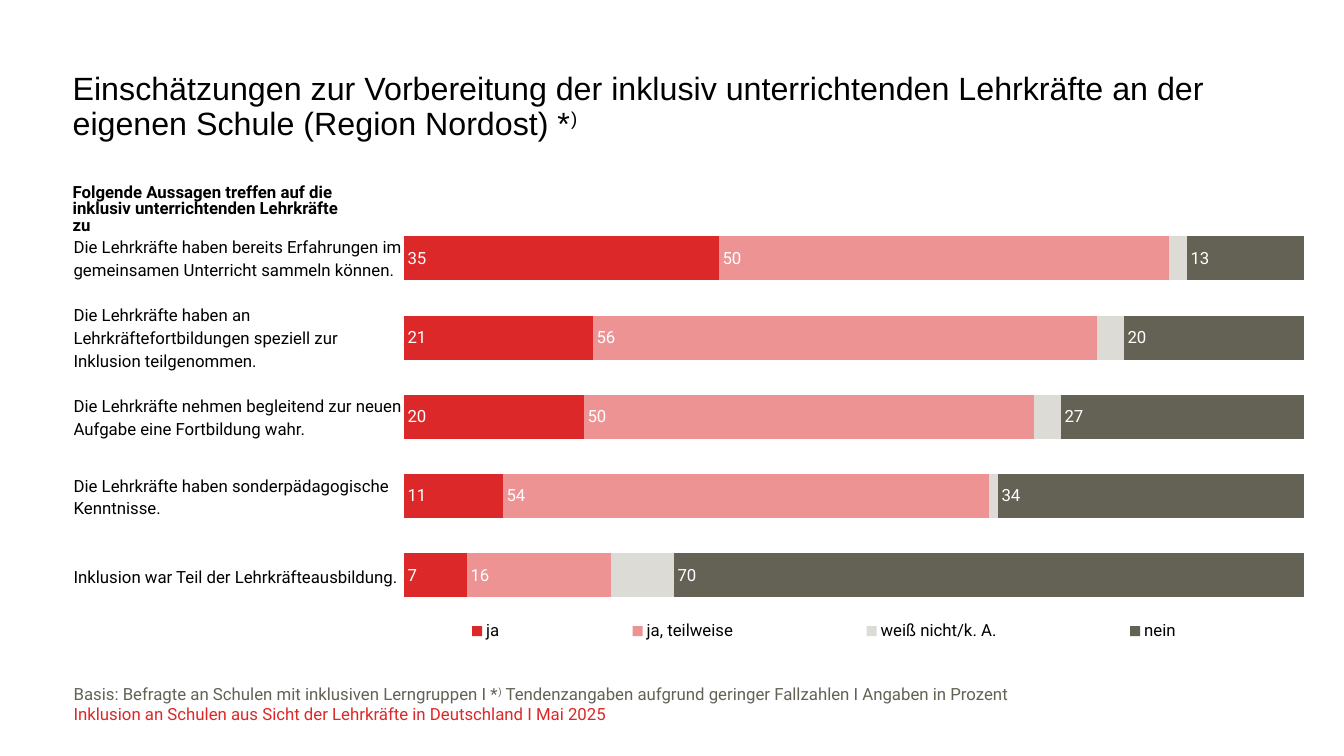
import pptx
import pptx.chart.data
import pptx.dml.color
import pptx.enum.chart
import pptx.enum.text
import pptx.util
from lxml import etree

Inches = pptx.util.Inches
Pt = pptx.util.Pt
ANCHOR = pptx.enum.text.MSO_ANCHOR

COLORS = {
    "text": "000000",
    "label": "FFFFFF",
    "ja": "DC2828",
    "teilweise": "ED9393",
    "unbekannt": "DCDBD5",
    "nein": "636255",
}

STATEMENTS = [
    "Die Lehrkräfte haben bereits Erfahrungen im gemeinsamen Unterricht sammeln können.",
    "Die Lehrkräfte haben an Lehrkräftefortbildungen speziell zur Inklusion teilgenommen.",
    "Die Lehrkräfte nehmen begleitend zur neuen Aufgabe eine Fortbildung wahr.",
    "Die Lehrkräfte haben sonderpädagogische Kenntnisse.",
    "Inklusion war Teil der Lehrkräfteausbildung.",
]

# Name, colour, values, labels shown
ANSWERS = [
    ("ja", "ja", (35, 21, 20, 11, 7), True),
    ("ja, teilweise", "teilweise", (50, 56, 50, 54, 16), True),
    ("weiß nicht/k. A.", "unbekannt", (2, 3, 3, 1, 7), False),
    ("nein", "nein", (13, 20, 27, 34, 70), True),
]


def rgb(name):
    return pptx.dml.color.RGBColor.from_string(COLORS[name])


class SurveySlide:
    """Holds the style and the current slide."""

    font_name = "Roboto"
    font_size = 12

    def __init__(self, presentation):
        self.slide = presentation.slides.add_slide(presentation.slide_layouts[5])

    def style_font(self, font, color="text", size=None, name=None, bold=False):
        font.name = name or self.font_name
        font.size = Pt(size or self.font_size)
        font.bold = bold
        font.color.rgb = rgb(color)

    def fill_paragraph(self, paragraph, pieces, **style):
        """Write the pieces as runs; every second piece is superscript."""
        for index, piece in enumerate(pieces):
            run = paragraph.add_run()
            run.text = piece
            self.style_font(run.font, **style)
            if index % 2:
                run._r.get_or_add_rPr().set("baseline", "30000")

    def clear_margins(self, box):
        box.margin_left = box.margin_right = box.margin_top = box.margin_bottom = 0

    def add_title(self, left, top, width, height, pieces):
        title = self.slide.shapes.title
        title.left, title.top = Inches(left), Inches(top)
        title.width, title.height = Inches(width), Inches(height)
        text_frame = title.text_frame
        self.clear_margins(text_frame)
        text_frame.word_wrap = True
        text_frame.auto_size = pptx.enum.text.MSO_AUTO_SIZE.NONE
        text_frame.vertical_anchor = ANCHOR.TOP
        paragraph = text_frame.paragraphs[0]
        paragraph.alignment = pptx.enum.text.PP_ALIGN.LEFT
        paragraph.line_spacing = 0.9
        self.fill_paragraph(paragraph, pieces, size=23, name="Arial")

    def add_footer(self, left, top, width, height, basis, source):
        box = self.slide.shapes.add_textbox(
            Inches(left), Inches(top), Inches(width), Inches(height))
        text_frame = box.text_frame
        text_frame.word_wrap = True
        self.clear_margins(text_frame)
        text_frame.margin_top = Inches(0.17)
        paragraph = text_frame.paragraphs[0]
        paragraph.line_spacing = 0.85
        self.fill_paragraph(paragraph, basis, color="nein")
        self.fill_paragraph(text_frame.add_paragraph(), [source], color="ja")

    def add_text_table(self, left, top, width, row_height, texts, anchor,
                       line_spacing, gap=0, bold=False):
        table = self.slide.shapes.add_table(
            len(texts), 1, Inches(left), Inches(top), Inches(width),
            Inches(row_height * len(texts))).table
        table.first_row = table.horz_banding = False
        for row, text in zip(table.rows, texts):
            row.height = Inches(row_height)
            cell = row.cells[0]
            cell.fill.background()
            cell.vertical_anchor = anchor
            self.clear_margins(cell)
            paragraph = cell.text_frame.paragraphs[0]
            paragraph.line_spacing = line_spacing
            if gap:
                paragraph.space_after = Pt(gap)
            self.fill_paragraph(paragraph, [text], bold=bold)

    def set_layout(self, element, position, inner=False):
        """Give a plot area or legend a fixed place in chart fractions."""
        for old in element.findall(pptx.oxml.ns.qn("c:layout")):
            element.remove(old)
        layout = etree.Element(pptx.oxml.ns.qn("c:layout"))
        manual = etree.SubElement(layout, pptx.oxml.ns.qn("c:manualLayout"))
        settings = [("layoutTarget", "inner")] if inner else []
        settings += [("xMode", "edge"), ("yMode", "edge")]
        settings += zip("xywh", position)
        for tag, value in settings:
            etree.SubElement(manual, pptx.oxml.ns.qn("c:" + tag)).set("val", str(value))
        element.insert(0 if inner else 1, layout)

    def add_stacked_bars(self, left, top, width, height, answers):
        data = pptx.chart.data.CategoryChartData()
        data.categories = [str(number + 1) for number in range(len(answers[0][2]))]
        for name, _, values, _ in answers:
            data.add_series(name, values)
        chart = self.slide.shapes.add_chart(
            pptx.enum.chart.XL_CHART_TYPE.BAR_STACKED, Inches(left), Inches(top),
            Inches(width), Inches(height), data).chart
        self.style_font(chart.font)
        chart.has_title = False

        # Axes
        chart.category_axis.reverse_order = True
        chart.category_axis.visible = False
        value_axis = chart.value_axis
        value_axis.minimum_scale, value_axis.maximum_scale = 0, 100
        value_axis.major_unit = 20
        value_axis.has_major_gridlines = False
        value_axis.visible = False

        # Bars and value labels
        plot = chart.plots[0]
        plot.gap_width, plot.overlap = 80, 100
        plot.vary_by_categories = False
        for series, (_, color, _, labelled) in zip(plot.series, answers):
            series.format.fill.solid()
            series.format.fill.fore_color.rgb = rgb(color)
            if labelled:
                labels = series.data_labels
                labels.show_value = True
                labels.position = pptx.enum.chart.XL_LABEL_POSITION.INSIDE_BASE
                self.style_font(labels.font, color="label")

        # Legend and plot position
        chart.has_legend = True
        chart.legend.position = pptx.enum.chart.XL_LEGEND_POSITION.BOTTOM
        chart.legend.include_in_layout = False
        self.style_font(chart.legend.font)
        plot_area = chart._chartSpace.chart.plotArea
        self.set_layout(plot_area, (0.09, 0.02, 0.91, 0.87), inner=True)
        self.set_layout(chart.legend._element, (0.03, 0.89, 0.97, 0.07))


def main():
    presentation = pptx.Presentation()
    presentation.slide_width = Inches(13.33)
    presentation.slide_height = Inches(7.5)
    survey = SurveySlide(presentation)

    # Chart and title
    survey.add_stacked_bars(3.12, 2.08, 9.81, 4.52, ANSWERS)
    survey.add_title(0.72, 0.72, 12.21, 0.91, [
        "Einschätzungen zur Vorbereitung der inklusiv unterrichtenden Lehrkräfte "
        "an der eigenen Schule (Region Nordost) *", ")"])

    # Footer
    survey.add_footer(0.73, 6.64, 9.81, 0.59, [
        "Basis: Befragte an Schulen mit inklusiven Lerngruppen I *", ")",
        " Tendenzangaben aufgrund geringer Fallzahlen I Angaben in Prozent"],
        "Inklusion an Schulen aus Sicht der Lehrkräfte in Deutschland I Mai 2025")

    # Statements beside the bars and their heading
    survey.add_text_table(0.73, 2.16, 3.26, 0.79, STATEMENTS, ANCHOR.MIDDLE, 1.15, gap=2)
    survey.add_text_table(
        0.72, 1.82, 2.82, 0.22,
        ["Folgende Aussagen treffen auf die inklusiv unterrichtenden Lehrkräfte zu"],
        ANCHOR.BOTTOM, 0.85, bold=True)

    presentation.save("out.pptx")


if __name__ == "__main__":
    main()
